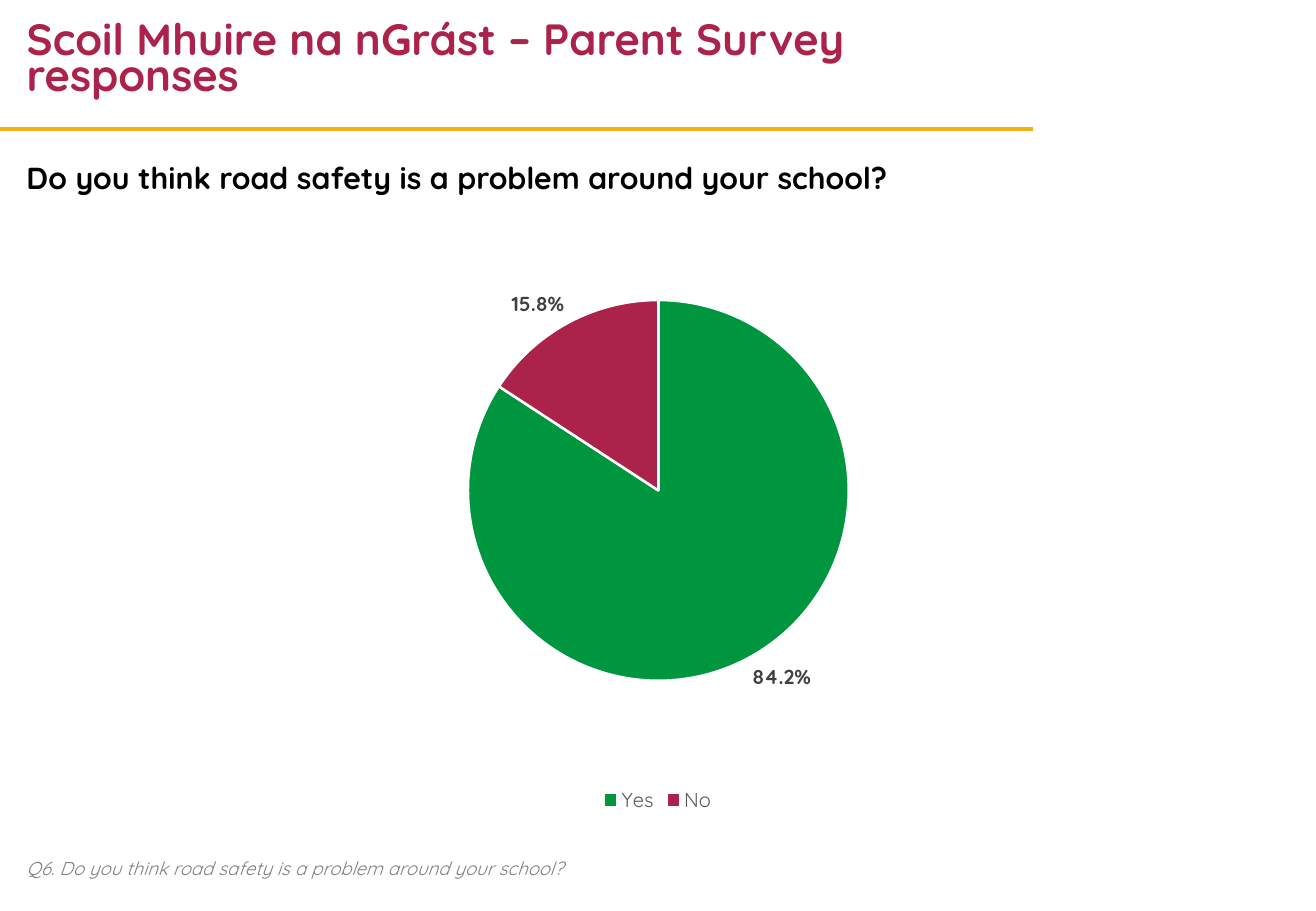
"""Build the parent survey slide with a pie chart of road safety answers."""
from lxml import etree
from pptx import Presentation
from pptx.chart.data import CategoryChartData
from pptx.dml.color import RGBColor
from pptx.enum.chart import XL_CHART_TYPE as CT, XL_LABEL_POSITION as LP, XL_LEGEND_POSITION as LEG
from pptx.enum.shapes import MSO_CONNECTOR
from pptx.enum.text import MSO_ANCHOR, MSO_AUTO_SIZE, PP_ALIGN
from pptx.oxml import parse_xml
from pptx.oxml.ns import nsdecls, qn
from pptx.util import Pt

FONT = "Quicksand"
BLACK = RGBColor(0x00, 0x00, 0x00)
WHITE = RGBColor(0xFF, 0xFF, 0xFF)
CRIMSON = RGBColor(0xAB, 0x22, 0x4A)
GREEN = RGBColor(0x00, 0x96, 0x40)
GOLD = RGBColor(0xF2, 0xB1, 0x14)
GREY = RGBColor(0x80, 0x80, 0x80)
LABEL = RGBColor(0x40, 0x40, 0x40)
LEGEND = RGBColor(0x59, 0x59, 0x59)
LEFT = Pt(8.64)


def style(font, size, color, bold=False, italic=False):
    font.name, font.size, font.bold, font.italic = FONT, Pt(size), bold, italic
    font.color.rgb = color


def write(sp, text, size, color, bold=False, italic=False):
    tf = sp.text_frame
    tf.word_wrap = True
    tf.auto_size = MSO_AUTO_SIZE.NONE
    tf.vertical_anchor = MSO_ANCHOR.MIDDLE
    p = tf.paragraphs[0]
    p.text = text
    p.alignment = PP_ALIGN.LEFT
    style(p.font, size, color, bold, italic)
    return p


prs = Presentation()
prs.slide_width, prs.slide_height = Pt(780), Pt(540)
s = prs.slides.add_slide(prs.slide_layouts[5])

rule = s.shapes.add_connector(MSO_CONNECTOR.STRAIGHT, 0, Pt(76.4), Pt(612), Pt(76.4))
rule.line.color.rgb = GOLD
rule.line.width = Pt(2.25)
etree.SubElement(rule._element.spPr, qn("a:effectLst"))

title = s.shapes.title
title.left, title.top, title.width, title.height = LEFT, Pt(8.64), Pt(598.3), Pt(56.9)
p = write(title, "Scoil Mhuire na nGrást – Parent Survey responses", 25.9, CRIMSON, bold=True)
p.line_spacing = 0.7

question = s.shapes.add_textbox(LEFT, Pt(90.7), Pt(585.4), Pt(28.8))
write(question, "Do you think road safety is a problem around your school?", 18, BLACK, bold=True)

note = s.shapes.add_textbox(LEFT, Pt(504), Pt(640), Pt(20.9))
write(note, "Q6. Do you think road safety is a problem around your school?", 11, GREY, italic=True)

data = CategoryChartData(number_format="0.0%")
data.categories = ["Yes", "No"]
data.add_series("Series 1", [0.842, 0.158])
chart = s.shapes.add_chart(CT.PIE, Pt(226.8), Pt(139.7), Pt(326.2), Pt(344.9), data).chart
chart.has_title = False
style(chart.font, 10, BLACK)
chart.has_legend = True
chart.legend.position = LEG.BOTTOM
chart.legend.include_in_layout = False
style(chart.legend.font, 12, LEGEND)

plot = chart.plots[0]
plot.vary_by_categories = True
for i, color in enumerate([GREEN, CRIMSON]):
    fmt = plot.series[0].points[i].format
    fmt.fill.solid()
    fmt.fill.fore_color.rgb = color
    fmt.line.color.rgb = WHITE
    fmt.line.width = Pt(1.5)

labels = plot.series[0].data_labels
labels.show_value = True
labels.show_percentage = False
labels.position = LP.OUTSIDE_END
labels.number_format = "0.0%"
labels.number_format_is_linked = False
style(labels.font, 12, LABEL, bold=True)

area = chart._chartSpace.chart.plotArea
for old in area.findall(qn("c:layout")):
    area.remove(old)
layout = parse_xml(f'<c:layout {nsdecls("c")}><c:manualLayout/></c:layout>')
settings = [("layoutTarget", "inner"), ("xMode", "edge"), ("yMode", "edge"),
            ("x", "0.155"), ("y", "0.063"), ("w", "0.692"), ("h", "0.75")]
for tag, val in settings:
    etree.SubElement(layout[0], qn(f"c:{tag}")).set("val", val)
area.insert(0, layout)

prs.save("out.pptx")
